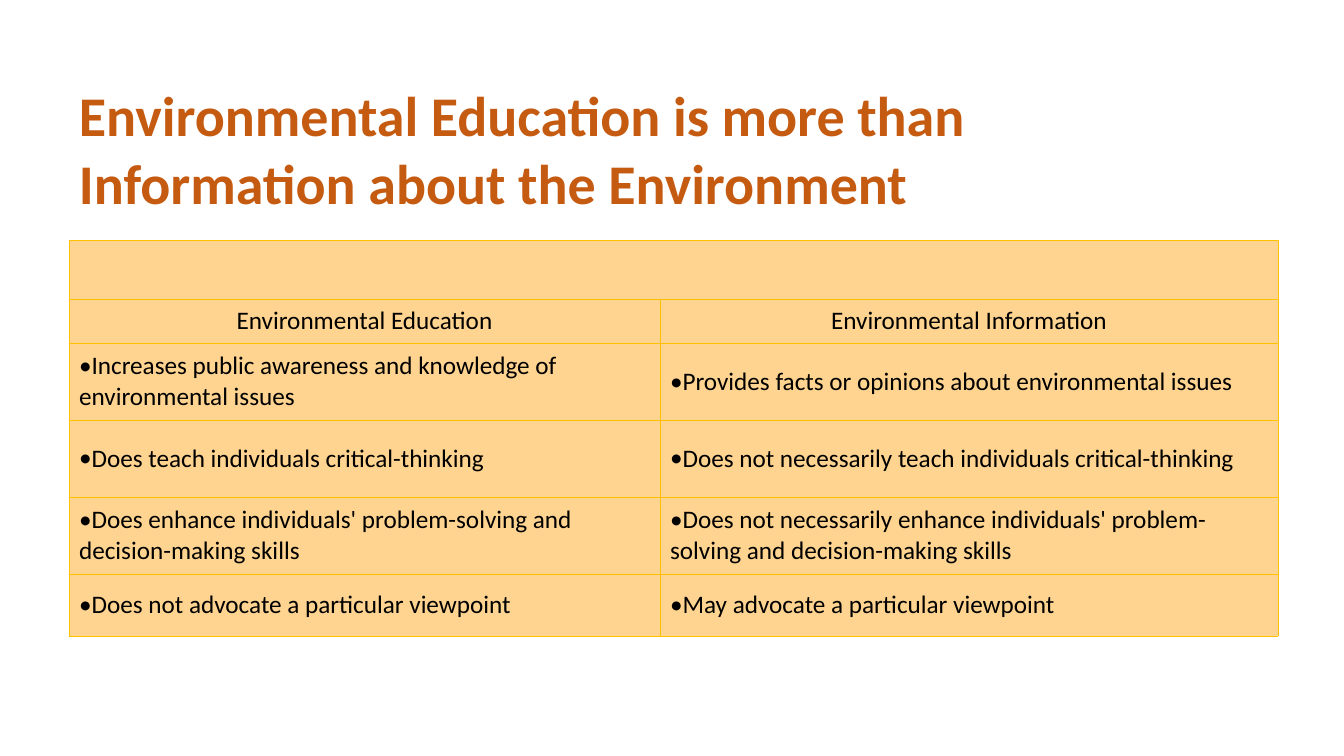
from dataclasses import dataclass
from typing import NamedTuple

from pptx import Presentation
from pptx.dml.color import RGBColor as Rgb
from pptx.enum.text import MSO_ANCHOR as Anchor, PP_ALIGN as Align
from pptx.oxml.ns import qn
from pptx.slide import Slide
from pptx.table import _Cell as Cell
from pptx.text.text import TextFrame as Frame
from pptx.util import Emu, Pt
from lxml.etree import SubElement as Sub

SCALE = 9072


@dataclass(frozen=True)
class Theme:
    font: str = "Calibri"
    title: Rgb = Rgb(0xC5, 0x5A, 0x11)
    ink: Rgb = Rgb(0, 0, 0)
    fill: Rgb = Rgb(0xFF, 0xD4, 0x90)
    edge: Rgb = Rgb(0xFF, 0xC0, 0x00)
    big: int = 40
    small: int = 18
    line: float = 0.5


class Row(NamedTuple):
    height: int
    texts: tuple[str, ...]
    head: bool = False


THEME = Theme()
LEFT = 69
COLS = (591, 618)
ROWS = (
    Row(59, ()),
    Row(44, ("Environmental Education", "Environmental Information"), head=True),
    Row(77, (
        "Increases public awareness and knowledge of environmental issues",
        "Provides facts or opinions about environmental issues",
    )),
    Row(77, (
        "Does teach individuals critical-thinking",
        "Does not necessarily teach individuals critical-thinking",
    )),
    Row(77, (
        "Does enhance individuals' problem-solving and decision-making skills",
        "Does not necessarily enhance individuals' problem-solving and decision-making skills",
    )),
    Row(62, (
        "Does not advocate a particular viewpoint",
        "May advocate a particular viewpoint",
    )),
)


def px(count: int) -> Emu:
    return Emu(count * SCALE)


def write(frame: Frame, text: str, *, size: int, color: Rgb, bold: bool = False,
          align: Align = Align.LEFT, bullet: bool = False) -> None:
    frame.word_wrap = True
    para = frame.paragraphs[0]
    para.alignment = align
    if bullet:
        props = para._p.get_or_add_pPr()
        props.set("marL", "0")
        props.set("indent", "0")
        Sub(props, qn("a:buFont")).set("typeface", THEME.font)
        Sub(props, qn("a:buChar")).set("char", "•")
    run = para.add_run()
    run.text = text
    run.font.name = THEME.font
    run.font.size = Pt(size)
    run.font.bold = bold
    run.font.color.rgb = color


def style(cell: Cell) -> None:
    props = cell._tc.get_or_add_tcPr()
    for side in ("lnL", "lnR", "lnT", "lnB"):
        line = Sub(props, qn(f"a:{side}"))
        line.set("w", str(Pt(THEME.line)))
        fill = Sub(line, qn("a:solidFill"))
        Sub(fill, qn("a:srgbClr")).set("val", str(THEME.edge))
    cell.fill.solid()
    cell.fill.fore_color.rgb = THEME.fill
    cell.vertical_anchor = Anchor.MIDDLE


def draw_title(slide: Slide) -> None:
    box = slide.shapes.add_textbox(px(LEFT), px(76), px(1006), px(146))
    write(box.text_frame, "Environmental Education is more than Information about the Environment",
          size=THEME.big, color=THEME.title, bold=True)


def draw_table(slide: Slide) -> None:
    high = sum(row.height for row in ROWS)
    table = slide.shapes.add_table(len(ROWS), len(COLS), px(LEFT), px(240),
                                   px(sum(COLS)), px(high)).table
    table.first_row = False
    table.horz_banding = False
    for col, width in zip(table.columns, COLS):
        col.width = px(width)
    for at, row in enumerate(ROWS):
        table.rows[at].height = px(row.height)
        for cell in table.rows[at].cells:
            style(cell)
        for spot, text in enumerate(row.texts):
            write(table.cell(at, spot).text_frame, text, size=THEME.small, color=THEME.ink,
                  align=Align.CENTER if row.head else Align.LEFT, bullet=not row.head)
    table.cell(0, 0).merge(table.cell(0, 1))


def main() -> None:
    deck = Presentation()
    deck.slide_width, deck.slide_height = px(1344), px(756)
    slide = deck.slides.add_slide(deck.slide_layouts[6])
    draw_table(slide)
    draw_title(slide)
    deck.save("out.pptx")


if __name__ == "__main__":
    main()
